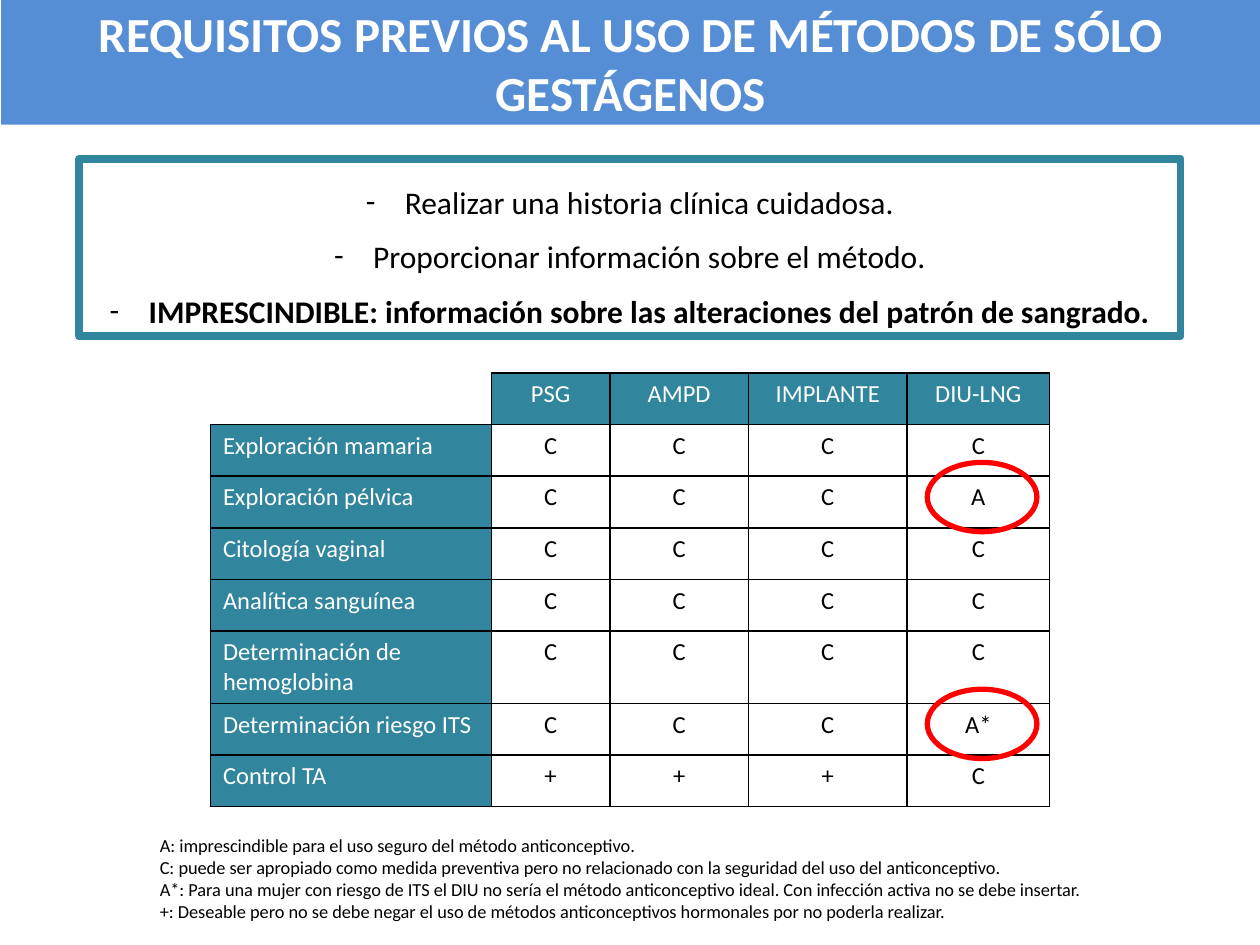
from lxml import etree
from pptx import Presentation
from pptx.dml.color import RGBColor
from pptx.enum.shapes import MSO_SHAPE
from pptx.enum.text import MSO_ANCHOR, MSO_AUTO_SIZE, PP_ALIGN
from pptx.oxml.ns import qn
from pptx.util import Inches, Pt

RECT, OVAL = MSO_SHAPE.RECTANGLE, MSO_SHAPE.OVAL
TOP, MIDDLE = MSO_ANCHOR.TOP, MSO_ANCHOR.MIDDLE
LEFT, CENTER = PP_ALIGN.LEFT, PP_ALIGN.CENTER
NO_FIT = MSO_AUTO_SIZE.NONE

FONT = "Calibri"
BLUE, TEAL, RED = "558ED5", "31859C", "FF0000"
BLACK, WHITE = "000000", "FFFFFF"

TITLE = "REQUISITOS PREVIOS AL USO DE MÉTODOS DE SÓLO GESTÁGENOS"
STEPS = [
    "Realizar una historia clínica cuidadosa.",
    "Proporcionar información sobre el método.",
    "IMPRESCINDIBLE: información sobre las alteraciones del patrón de sangrado.",
]
ROWS = [
    ["", "PSG", "AMPD", "IMPLANTE", "DIU-LNG"],
    ["Exploración mamaria", "C", "C", "C", "C"],
    ["Exploración pélvica", "C", "C", "C", "A"],
    ["Citología vaginal", "C", "C", "C", "C"],
    ["Analítica sanguínea", "C", "C", "C", "C"],
    ["Determinación de hemoglobina", "C", "C", "C", "C"],
    ["Determinación riesgo ITS", "C", "C", "C", "A*"],
    ["Control TA", "+", "+", "+", "C"],
]
WIDTHS = [2.23, 0.94, 1.1, 1.26, 1.13]
HEIGHTS = [0.41] * 5 + [0.57] + [0.41] * 2
NOTES = [
    "A: imprescindible para el uso seguro del método anticonceptivo.",
    "C: puede ser apropiado como medida preventiva pero no relacionado con la "
    "seguridad del uso del anticonceptivo.",
    "A*: Para una mujer con riesgo de ITS el DIU no sería el método "
    "anticonceptivo ideal. Con infección activa no se debe insertar.",
    "+: Deseable pero no se debe negar el uso de métodos anticonceptivos "
    "hormonales por no poderla realizar.",
]


def rgb(code):
    return RGBColor.from_string(code)


def style(para, size, color, align=LEFT, bold=False):
    para.alignment = align
    for run in para.runs:
        font = run.font
        font.name, font.size, font.bold = FONT, Pt(size), bold
        font.color.rgb = rgb(color)


def outline(slide, kind, box, color, width):
    """Add an unfilled shape with a coloured line."""
    shape = slide.shapes.add_shape(kind, *map(Inches, box))
    shape.shadow.inherit = False
    shape.fill.background()
    shape.line.color.rgb = rgb(color)
    shape.line.width = Pt(width)
    return shape


def add_title(slide, box):
    title = slide.shapes.title
    title.left, title.top, title.width, title.height = map(Inches, box)
    title.fill.solid()
    title.fill.fore_color.rgb = rgb(BLUE)
    frame = title.text_frame
    frame.text = TITLE
    frame.auto_size = NO_FIT
    frame.vertical_anchor = MIDDLE
    style(frame.paragraphs[0], 28, WHITE, CENTER, True)


def add_dash(para):
    props = para._p.get_or_add_pPr()
    props.set("marL", str(Inches(0.31)))
    props.set("indent", str(-Inches(0.31)))
    etree.SubElement(props, qn("a:buFont")).set("typeface", FONT)
    etree.SubElement(props, qn("a:buChar")).set("char", "-")


def add_steps(slide, box):
    frame = outline(slide, RECT, box, TEAL, 4.5).text_frame
    frame.word_wrap = True
    frame.vertical_anchor = TOP
    frame.margin_top = Inches(0.19)
    frame.text = "\n".join(STEPS)
    for i, para in enumerate(frame.paragraphs):
        add_dash(para)
        if i:
            para.space_before = Pt(9.5)
        style(para, 18, BLACK, CENTER, para.text == STEPS[-1])


def add_edges(cell, sides):
    """Draw black borders; they must come before the fill in the cell."""
    props = cell._tc.get_or_add_tcPr()
    for i, side in enumerate(sides):
        line = etree.Element(qn("a:ln" + side), w=str(Pt(1)))
        fill = etree.SubElement(line, qn("a:solidFill"))
        etree.SubElement(fill, qn("a:srgbClr")).set("val", BLACK)
        props.insert(i, line)


def fill_cell(cell, text, row, col):
    head = bool(text) and (row == 0 or col == 0)
    if head:
        cell.fill.solid()
        cell.fill.fore_color.rgb = rgb(TEAL)
    else:
        cell.fill.background()
    add_edges(cell, "LRTB" if text else "RB")
    cell.text = text
    style(cell.text_frame.paragraphs[0], 14, WHITE if head else BLACK,
          CENTER if col else LEFT)


def add_grid(slide, left, top):
    """Add the table, with rings round the cells marked A."""
    box = left, top, sum(WIDTHS), sum(HEIGHTS)
    table = slide.shapes.add_table(len(ROWS), len(WIDTHS),
                                   *map(Inches, box)).table
    table.first_row = table.horz_banding = False
    for col, width in zip(table.columns, WIDTHS):
        col.width = Inches(width)
    for r, texts in enumerate(ROWS):
        table.rows[r].height = Inches(HEIGHTS[r])
        for c, text in enumerate(texts):
            fill_cell(table.cell(r, c), text, r, c)
            if c and text.startswith("A") and r:
                x = left + sum(WIDTHS[:c]) + 0.16
                y = top + sum(HEIGHTS[:r]) - 0.11
                outline(slide, OVAL, (x, y, 0.87, 0.55), RED, 3)


def add_notes(slide, box):
    frame = slide.shapes.add_textbox(*map(Inches, box)).text_frame
    frame.word_wrap = False
    frame.text = "\n".join(NOTES)
    for para in frame.paragraphs:
        style(para, 10.5, BLACK)


def main():
    deck = Presentation()
    deck.slide_width, deck.slide_height = Inches(10), Inches(7.5)
    slide = deck.slides.add_slide(deck.slide_layouts[5])
    add_title(slide, (0.01, 0, 9.99, 0.99))
    add_steps(slide, (0.63, 1.26, 8.74, 1.41))
    add_grid(slide, 1.67, 2.96)
    add_notes(slide, (1.17, 6.57, 7.66, 0.81))
    deck.save("out.pptx")


if __name__ == "__main__":
    main()
